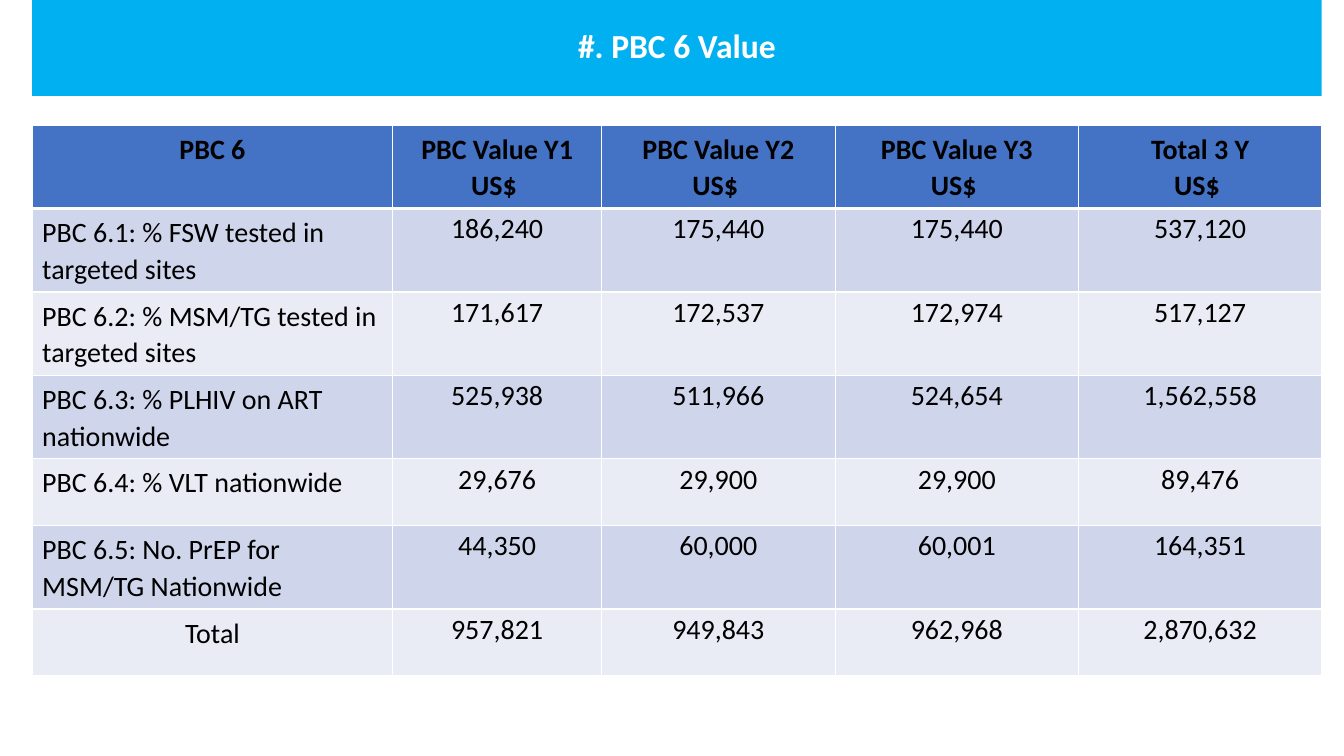
from dataclasses import dataclass

import lxml.etree
import pptx
import pptx.dml.color
import pptx.enum.shapes
import pptx.enum.text
import pptx.oxml.ns
import pptx.util

Cm = pptx.util.Cm
Pt = pptx.util.Pt
Align = pptx.enum.text.PP_ALIGN


@dataclass(frozen=True)
class Theme:
    font: str = "Calibri"
    title_size: int = 24
    table_size: int = 20
    banner: str = "00B0F0"
    header: str = "4472C4"
    bands: tuple[str, str] = ("CFD5EA", "E9EBF5")
    light: str = "FFFFFF"
    dark: str = "000000"
    thin_border: int = 1
    thick_border: int = 3


@dataclass(frozen=True)
class Indicator:
    label: str
    values: tuple[str, str, str, str]
    align: Align = Align.LEFT


THEME = Theme()
LEFT = Cm(0.81)
WIDTH = Cm(32.5)
ROW_HEIGHT = Cm(1.68)
COLUMN_WIDTHS = (Cm(9.09), Cm(5.26), Cm(5.89), Cm(6.13), Cm(6.13))
HEADINGS = ("PBC Value Y1", "PBC Value Y2", "PBC Value Y3", "Total 3 Y")
INDICATORS = (
    Indicator("PBC 6.1: % FSW tested in targeted sites", ("186,240", "175,440", "175,440", "537,120")),
    Indicator("PBC 6.2: % MSM/TG tested in targeted sites", ("171,617", "172,537", "172,974", "517,127")),
    Indicator("PBC 6.3: % PLHIV on ART nationwide", ("525,938", "511,966", "524,654", "1,562,558")),
    Indicator("PBC 6.4: % VLT nationwide", ("29,676", "29,900", "29,900", "89,476")),
    Indicator("PBC 6.5: No. PrEP for MSM/TG Nationwide", ("44,350", "60,000", "60,001", "164,351")),
    Indicator("Total", ("957,821", "949,843", "962,968", "2,870,632"), Align.CENTER),
)


def color(value: str) -> pptx.dml.color.RGBColor:
    return pptx.dml.color.RGBColor.from_string(value)


def write_lines(text_frame, lines: tuple[str, ...], size: int, ink: str, bold: bool,
                align: Align, spacing: float) -> None:
    for index, line in enumerate(lines):
        paragraph = text_frame.add_paragraph() if index else text_frame.paragraphs[0]
        paragraph.alignment = align
        paragraph.line_spacing = spacing
        run = paragraph.add_run()
        run.text = line
        run.font.name = THEME.font
        run.font.size = Pt(size)
        run.font.bold = bold
        run.font.color.rgb = color(ink)


def set_borders(cell, top: int, bottom: int) -> None:
    properties = cell._tc.get_or_add_tcPr()
    widths = {"a:lnL": THEME.thin_border, "a:lnR": THEME.thin_border, "a:lnT": top, "a:lnB": bottom}
    for index, (tag, width) in enumerate(widths.items()):
        line = lxml.etree.Element(pptx.oxml.ns.qn(tag), w=str(Pt(width)))
        fill = lxml.etree.SubElement(line, pptx.oxml.ns.qn("a:solidFill"))
        lxml.etree.SubElement(fill, pptx.oxml.ns.qn("a:srgbClr"), val=THEME.light)
        properties.insert(index, line)


def fill_cell(cell, lines: tuple[str, ...], background: str, align: Align = Align.CENTER,
              bold: bool = False, top: int = THEME.thin_border, bottom: int = THEME.thin_border) -> None:
    cell.fill.solid()
    cell.fill.fore_color.rgb = color(background)
    set_borders(cell, top, bottom)
    write_lines(cell.text_frame, lines, THEME.table_size, THEME.dark, bold, align, 1.07)


def add_value_table(slide) -> None:
    row_count = len(INDICATORS) + 1
    table = slide.shapes.add_table(
        row_count, len(COLUMN_WIDTHS), LEFT, Cm(3.15), WIDTH, ROW_HEIGHT * row_count).table
    for column, width in zip(table.columns, COLUMN_WIDTHS):
        column.width = width
    for row in table.rows:
        row.height = ROW_HEIGHT

    header_lines = [("PBC 6",)] + [(heading, "US$ ") for heading in HEADINGS]
    for index, lines in enumerate(header_lines):
        fill_cell(table.cell(0, index), lines, THEME.header, bold=True, bottom=THEME.thick_border)

    for row_index, indicator in enumerate(INDICATORS, start=1):
        band = THEME.bands[(row_index - 1) % 2]
        top = THEME.thick_border if row_index == 1 else THEME.thin_border
        fill_cell(table.cell(row_index, 0), (indicator.label,), band, indicator.align, top=top)
        for column_index, value in enumerate(indicator.values, start=1):
            cell = table.cell(row_index, column_index)
            cell.margin_left = cell.margin_right = cell.margin_top = Cm(0.03)
            cell.margin_bottom = 0
            fill_cell(cell, (value,), band, top=top)


def add_banner(slide, title: str) -> None:
    shape = slide.shapes.add_shape(
        pptx.enum.shapes.MSO_SHAPE.RECTANGLE, LEFT, 0, WIDTH, Cm(2.42))
    shape.shadow.inherit = False
    shape.fill.solid()
    shape.fill.fore_color.rgb = color(THEME.banner)
    shape.line.fill.background()
    shape.text_frame.word_wrap = True
    shape.text_frame.vertical_anchor = pptx.enum.text.MSO_ANCHOR.MIDDLE
    write_lines(shape.text_frame, (title,), THEME.title_size, THEME.light, True, Align.CENTER, 0.9)


def main() -> None:
    presentation = pptx.Presentation()
    presentation.slide_width = Cm(33.87)
    presentation.slide_height = Cm(19.05)
    slide = presentation.slides.add_slide(presentation.slide_layouts[6])
    add_value_table(slide)
    add_banner(slide, "#. PBC 6 Value")
    presentation.save("out.pptx")


if __name__ == "__main__":
    main()
